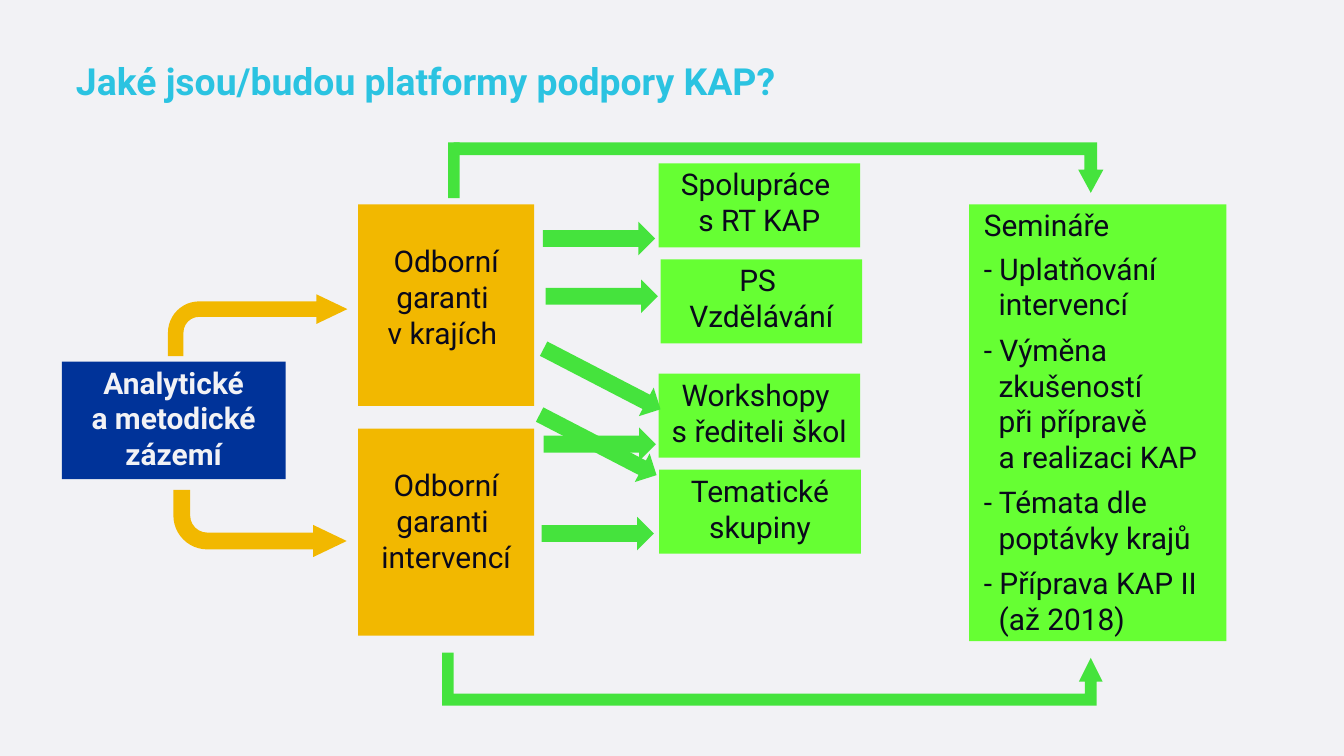
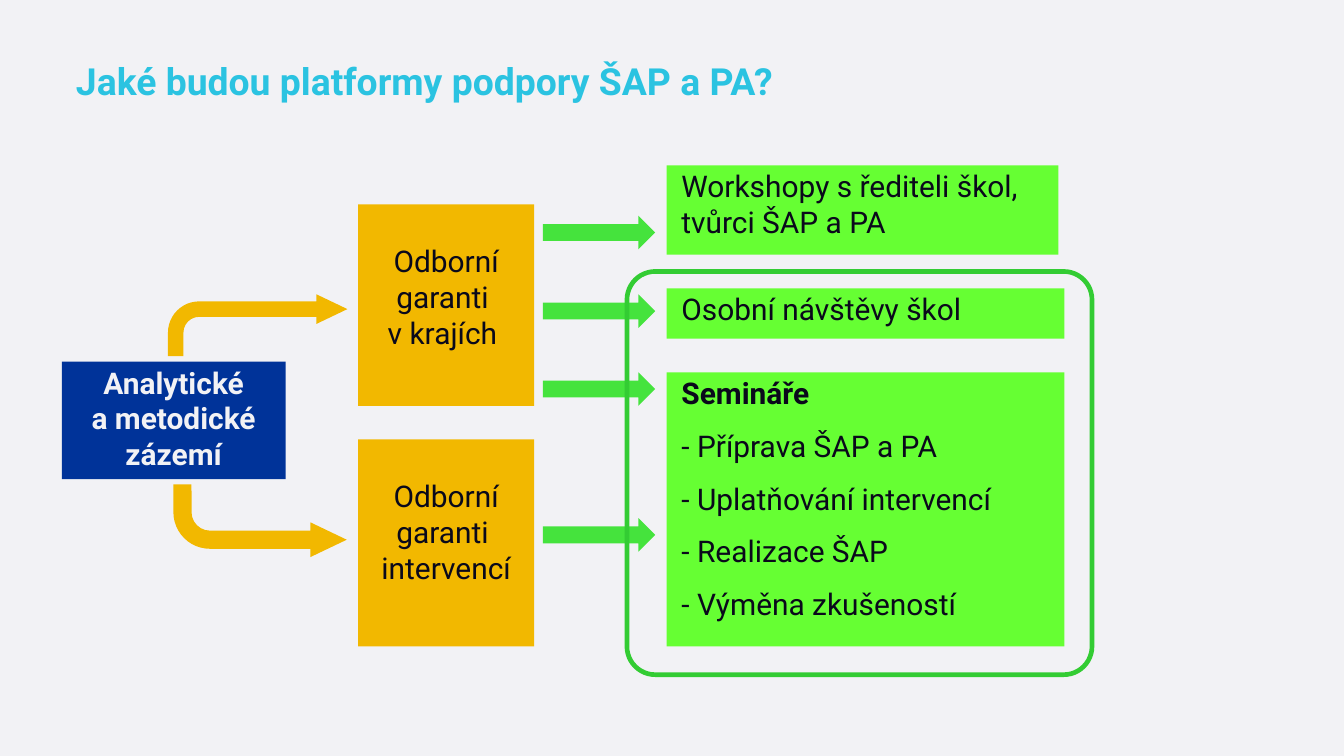
from pptx import Presentation
from pptx.dml.color import RGBColor
from pptx.enum.shapes import MSO_SHAPE as Kind
from pptx.enum.text import MSO_ANCHOR as Anchor, MSO_AUTO_SIZE as Fit, PP_ALIGN as Align
from pptx.util import Inches, Pt

FONT = "Roboto"
PAPER, CYAN, INK = "F2F2F5", "2BC3E1", "0A091B"
NAVY, GOLD, LIME = "003399", "F2B800", "66FF33"
GREEN, EDGE = "45E33D", "33CC33"
BEND = (0.25, 0.239, 0.5, 0.505)
PAD = 0.22

BASE = ["Analytické", "a metodické zázemí"]
REGION = ["Odborní garanti ", "v krajích "]
ACTION = ["Odborní garanti ", "intervencí"]

KAP = {
    "title": "Jaké jsou/budou platformy podpory KAP?",
    "action": 6.38,
    "bend": (7.29, 1),
    "cards": [
        ((9.8, 2.43), ["Spolupráce ", "s RT KAP"]),
        ((9.83, 3.86), ["PS ", "Vzdělávání"]),
        ((9.8, 5.56), ["Workshopy ", "s řediteli škol"]),
        ((9.81, 6.99), ["Tematické skupiny"]),
    ],
    "lists": [
        ((14.42, 3.04, 3.83, 6.5), False, [
            ("Semináře", 0),
            ("- Uplatňování\vintervencí", 8),
            ("- Výměna\vzkušeností\vpři přípravě\va realizaci KAP", 10),
            ("- Témata dle\vpoptávky krajů", 10),
            ("- Příprava KAP II\v(až 2018)", 10),
        ]),
    ],
    "arrows": [(8.08, 3.3), (8.12, 4.16), (8.09, 6.36), (8.06, 7.69)],
    "slants": [(7.92, 6.38), (7.98, 5.4)],
    "loops": [
        ((6.75, 2.12, 9.67, 0.75), (0.25, 0.25, 0.461), True),
        ((6.58, 9.79, 9.83, 0.71), (0.25, 0.25, 0.5), False),
    ],
    "stems": [(6.67, 2.12, 0.17, 0.83), (6.58, 9.71, 0.17, 0.75)],
    "frames": [],
}

PLANS = {
    "title": "Jaké budou platformy podpory ŠAP a PA?",
    "action": 6.54,
    "bend": (7.21, 1.08),
    "cards": [],
    "lists": [
        ((9.92, 2.46, 5.83, 1.33), False,
         [("Workshopy s řediteli škol,", 0), ("tvůrci ŠAP a PA", 0)]),
        ((9.92, 4.29, 5.92, 0.75), False, [("Osobní návštěvy škol", 0)]),
        ((9.92, 5.54, 5.92, 4.08), True, [
            ("Semináře", 0),
            ("- Příprava ŠAP a PA", 18),
            ("- Uplatňování intervencí", 18),
            ("- Realizace ŠAP", 18),
            ("- Výměna zkušeností", 18),
        ]),
    ],
    "arrows": [(8.08, top) for top in (3.21, 4.38, 5.54, 7.71)],
    "slants": [],
    "loops": [],
    "stems": [],
    "frames": [(9.33, 4.04, 6.92, 6)],
}


def rgb(code):
    return RGBColor.from_string(code)


def style(para, size, color, bold=False):
    font = para.font
    font.name, font.size, font.bold = FONT, Pt(size), bold
    font.color.rgb = rgb(color)


def draw(slide, kind, place, fill=None, adj=(), flip=False, turn=0):
    shape = slide.shapes.add_shape(kind, *map(Inches, place))
    shape.shadow.inherit = False
    shape.line.fill.background()
    if fill:
        shape.fill.solid()
        shape.fill.fore_color.rgb = rgb(fill)
    else:
        shape.fill.background()
    for i, value in enumerate(adj):
        shape.adjustments[i] = value
    if flip:
        shape._element.spPr.get_or_add_xfrm().set("flipV", "1")
    shape.rotation = turn
    return shape


def box(slide, place, fill, lines, color=INK, bold=False, top=0.04, left=0, align=Align.CENTER):
    frame = draw(slide, Kind.RECTANGLE, place, fill).text_frame
    frame.word_wrap = True
    frame.vertical_anchor = Anchor.TOP
    frame.margin_left, frame.margin_right = Inches(left), 0
    frame.margin_top, frame.margin_bottom = Inches(top), Inches(0.01)
    for i, line in enumerate(lines):
        para = frame.add_paragraph() if i else frame.paragraphs[0]
        para.text = line
        para.alignment = align
        style(para, 32, color, bold)
    return frame.paragraphs


def listing(slide, place, strong, items):
    texts = [text for text, gap in items]
    paras = box(slide, place, LIME, texts, left=PAD, align=Align.LEFT)
    paras[0].font.bold = strong
    for para, (text, gap) in zip(paras, items):
        para.space_before = Pt(gap)
        if text.startswith("- "):
            props = para._p.get_or_add_pPr()
            props.set("marL", str(Inches(PAD)))
            props.set("indent", str(-Inches(PAD)))


def heading(slide, text):
    title = slide.shapes.title
    title.left, title.top, title.width, title.height = map(Inches, (1.03, 0.88, 18.05, 0.71))
    frame = title.text_frame
    frame.text = text
    frame.auto_size = Fit.NONE
    frame.word_wrap = True
    frame.vertical_anchor = Anchor.MIDDLE
    para = frame.paragraphs[0]
    para.alignment = Align.LEFT
    para.line_spacing = 0.9
    style(para, 40, CYAN, True)


def build(deck, data):
    slide = deck.slides.add_slide(deck.slide_layouts[5])
    heading(slide, data["title"])
    box(slide, (0.92, 5.38, 3.33, 1.75), NAVY, BASE, PAPER, True)
    box(slide, (5.33, 3.04, 2.62, 3), GOLD, REGION, top=0.57)
    box(slide, (5.33, data["action"], 2.62, 3.08), GOLD, ACTION, top=0.57)
    for spot, lines in data["cards"]:
        box(slide, (*spot, 3, 1.25), LIME, lines)
    for place, strong, items in data["lists"]:
        listing(slide, place, strong, items)
    for spot in data["arrows"]:
        draw(slide, Kind.RIGHT_ARROW, (*spot, 1.67, 0.5), GREEN)
    for spot in data["slants"]:
        draw(slide, Kind.RIGHT_ARROW, (*spot, 1.96, 0.48), GREEN, turn=27.4)
    for place, adj, flip in data["loops"]:
        draw(slide, Kind.BENT_UP_ARROW, place, GREEN, adj, flip)
    for place in data["stems"]:
        draw(slide, Kind.RECTANGLE, place, GREEN)
    top, high = data["bend"]
    draw(slide, Kind.BENT_ARROW, (2.5, 4.38, 2.67, 0.92), GOLD, BEND)
    draw(slide, Kind.BENT_ARROW, (2.58, top, 2.58, high), GOLD, BEND, True)
    for place in data["frames"]:
        line = draw(slide, Kind.ROUNDED_RECTANGLE, place, adj=(0.07,)).line
        line.color.rgb = rgb(EDGE)
        line.width = Pt(5)


def main():
    deck = Presentation()
    deck.slide_width, deck.slide_height = Inches(20), Inches(11.25)
    back = deck.slide_master.background.fill
    back.solid()
    back.fore_color.rgb = rgb(PAPER)
    for data in (KAP, PLANS):
        build(deck, data)
    deck.save("out.pptx")


if __name__ == "__main__":
    main()
